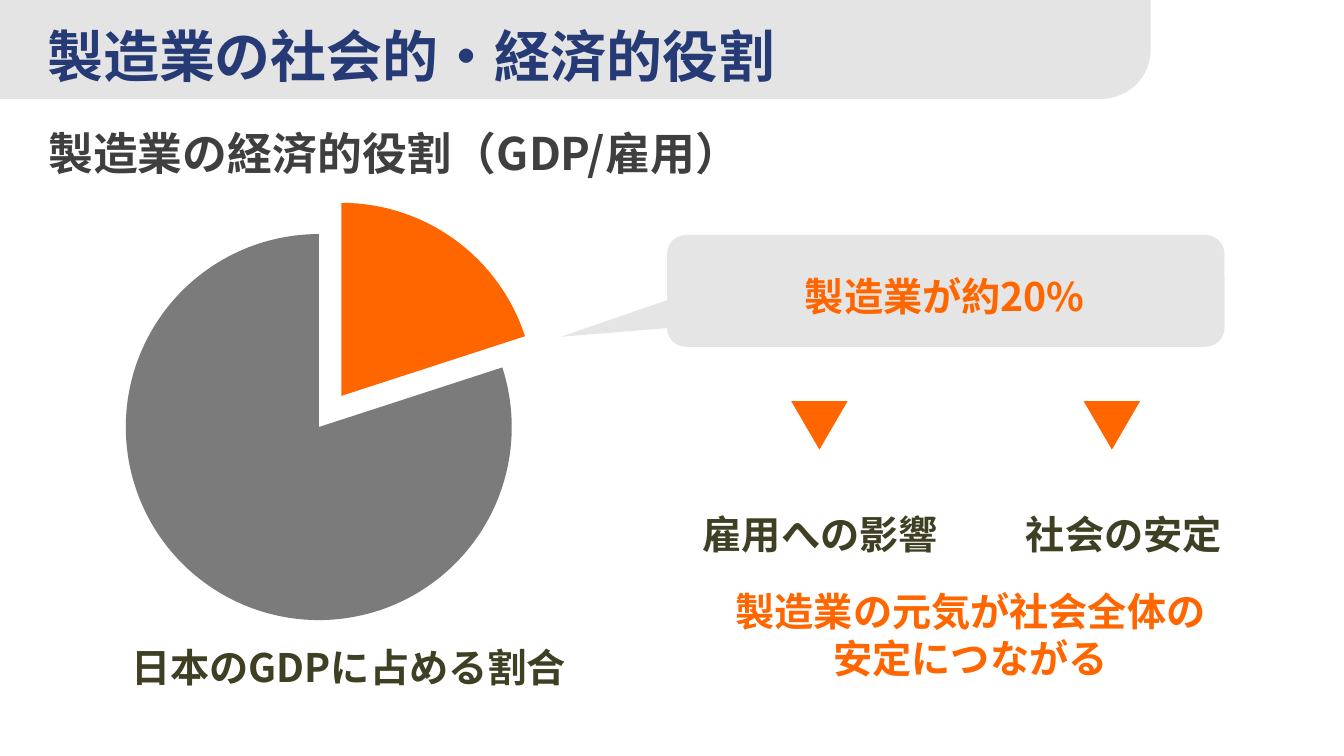
from lxml.etree import SubElement
from pptx import Presentation
from pptx.chart.data import CategoryChartData
from pptx.dml.color import RGBColor
from pptx.enum.chart import XL_CHART_TYPE
from pptx.enum.shapes import MSO_SHAPE
from pptx.enum.text import MSO_ANCHOR, PP_ALIGN
from pptx.oxml import parse_xml
from pptx.oxml.ns import nsdecls, qn
from pptx.util import Cm, Pt

NAVY = RGBColor(0x26, 0x3B, 0x75)
CHARCOAL = RGBColor(0x3F, 0x3F, 0x3F)
OLIVE = RGBColor(0x3F, 0x3F, 0x24)
ORANGE = RGBColor(0xFF, 0x66, 0x00)
GRAY = RGBColor(0x7B, 0x7B, 0x7B)
BAND_GRAY = RGBColor(0xE4, 0xE4, 0xE4)
CALLOUT_GRAY = RGBColor(0xE5, 0xE5, 0xE5)


def write_text(box, text, font, size=28, color=OLIVE, align=PP_ALIGN.CENTER, spacing=None):
    """Fill a box with bold text, one paragraph for each line."""
    frame = box.text_frame
    for index, line in enumerate(text.split("\n")):
        para = frame.add_paragraph() if index else frame.paragraphs[0]
        para.alignment = align
        para.line_spacing = spacing
        span = para.add_run()
        span.text = line
        span.font.name = font
        span.font.size = Pt(size)
        span.font.bold = True
        span.font.color.rgb = color
        east_asian = SubElement(span.font._element, qn("a:ea"))
        east_asian.set("typeface", font)


class SlideBuilder:
    text_font = "Noto Sans CJK JP"
    chart_font = "Arial"

    def __init__(self, page):
        self.page = page

    def shape(self, kind, left, top, width, height, fill, adjustments=(), rotation=0):
        shape = self.page.shapes.add_shape(kind, Cm(left), Cm(top), Cm(width), Cm(height))
        shape.shadow.inherit = False
        shape.fill.solid()
        shape.fill.fore_color.rgb = fill
        shape.line.fill.background()
        shape.rotation = rotation
        for index, value in enumerate(adjustments):
            shape.adjustments[index] = value
        return shape

    def text(self, text, left, top, width, height, anchor=MSO_ANCHOR.TOP, **style):
        box = self.page.shapes.add_textbox(Cm(left), Cm(top), Cm(width), Cm(height))
        box.text_frame.word_wrap = True
        box.text_frame.vertical_anchor = anchor
        write_text(box, text, self.text_font, **style)
        return box

    def pie(self, left, top, width, height, values, colors, explosion):
        data = CategoryChartData()
        data.categories = [str(number) for number in range(1, len(values) + 1)]
        data.add_series("Series 1", values)
        chart = self.page.shapes.add_chart(
            XL_CHART_TYPE.PIE, Cm(left), Cm(top), Cm(width), Cm(height), data).chart
        chart.has_legend = False
        chart.has_title = False
        chart.font.name = self.chart_font
        chart.font.size = Pt(10)
        chart.font.color.rgb = CHARCOAL
        plot = chart.plots[0]
        plot.vary_by_categories = True
        series = plot.series[0]
        for index, color in enumerate(colors):
            fill = series.points[index].format.fill
            fill.solid()
            fill.fore_color.rgb = color
        # Pull the slices apart
        series._element.find(qn("c:dPt")).addprevious(
            parse_xml(f'<c:explosion {nsdecls("c")} val="{explosion}"/>'))


def main():
    deck = Presentation()
    deck.slide_width, deck.slide_height = Cm(33.87), Cm(19.05)
    page = deck.slides.add_slide(deck.slide_layouts[6])
    builder = SlideBuilder(page)

    # Heading band, title and subtitle
    band = builder.shape(MSO_SHAPE.ROUND_1_RECTANGLE, 0, 0, 29, 2.49, BAND_GRAY, [0.5], 180)
    band._element.spPr.find(qn("a:xfrm")).set("flipH", "1")
    title = builder.text("製造業の社会的・経済的役割", 0.94, 0.33, 28.07, 1.9,
                         anchor=MSO_ANCHOR.MIDDLE, size=40, color=NAVY, align=PP_ALIGN.LEFT)
    title.text_frame.margin_top, title.text_frame.margin_bottom = Cm(0.2), 0
    builder.text("製造業の経済的役割（GDP/雇用）", 0.97, 3.05, 29.69, 1.63,
                 size=32, color=CHARCOAL, align=PP_ALIGN.LEFT)

    # Share of GDP
    builder.pie(0, 4.67, 16.64, 11.4, [20, 80], [ORANGE, GRAY], explosion=10)
    builder.text("日本のGDPに占める割合", 1.65, 16.08, 14.27, 1.45)

    # Callout for the manufacturing slice
    builder.shape(MSO_SHAPE.ROUNDED_RECTANGULAR_CALLOUT, 16.81, 5.92, 14.05, 2.82,
                  CALLOUT_GRAY, [-0.69, 0.41, 0.17])
    builder.text("製造業が約20%", 19.3, 6.73, 9.02, 1.45, color=ORANGE)

    # Effects below the callout
    for effect, text_left, arrow_left in (("雇用への影響", 16.81, 19.94),
                                          ("社会の安定", 24.46, 27.31)):
        builder.text(effect, text_left, 12.15, 7.72, 1.9, spacing=1.5)
        builder.shape(MSO_SHAPE.ISOSCELES_TRIANGLE, arrow_left, 10.11, 1.42, 1.22,
                      ORANGE, rotation=180)

    # Conclusion
    builder.text("製造業の元気が社会全体の\n安定につながる", 16.33, 14.68, 16.26, 2.64, color=ORANGE)

    deck.save("out.pptx")


if __name__ == "__main__":
    main()
